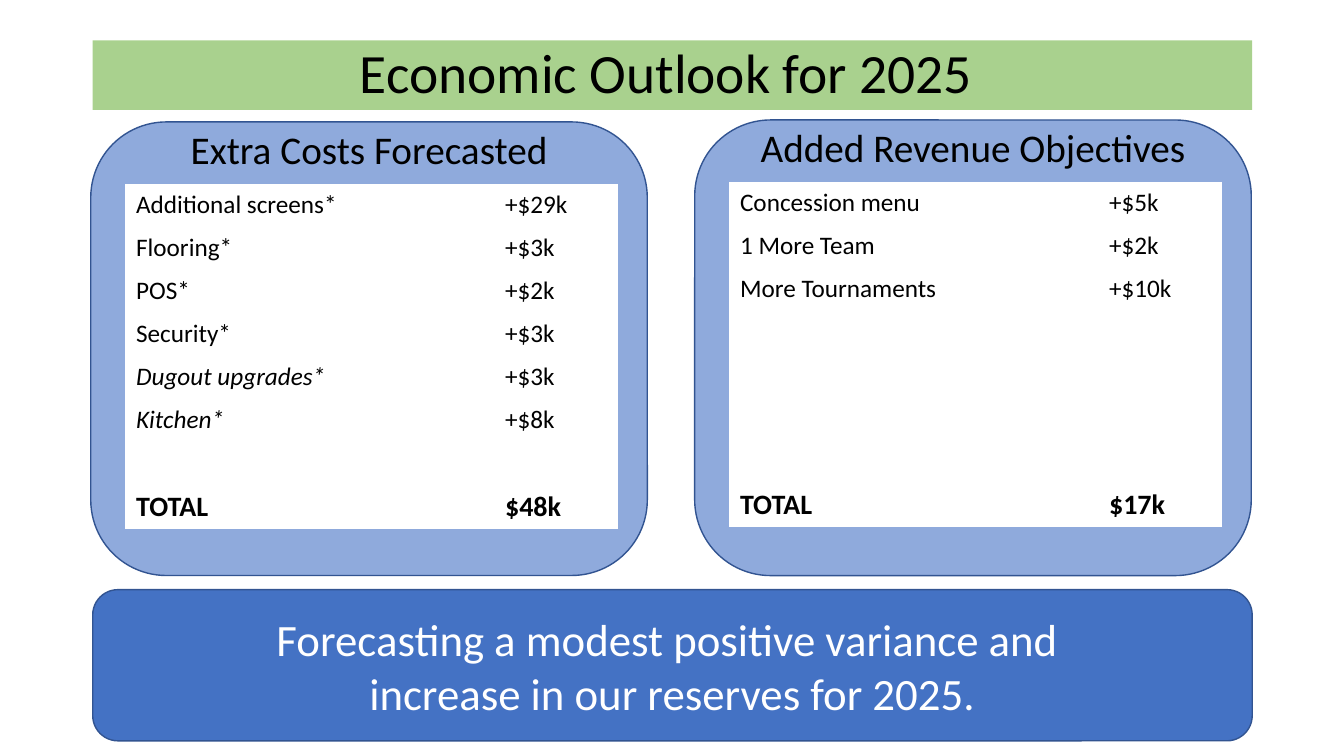
from dataclasses import dataclass

import pptx
import pptx.dml.color
import pptx.enum.shapes
import pptx.enum.text
import pptx.util

Inches = pptx.util.Inches
MSO_SHAPE = pptx.enum.shapes.MSO_SHAPE
ROWS = 8
TABLE_HEIGHT = 3.41
COLUMN_WIDTHS = (3.66, 1.21)


@dataclass
class Item:
    label: str
    amount: str
    italic: bool = False


@dataclass
class Panel:
    left: float
    top: float
    height: float
    heading: str
    items: list[Item]
    total: str


PANELS = [
    Panel(0.9, 1.21, 4.5, "Extra Costs Forecasted", [
        Item("Additional screens*", "+$29k"),
        Item("Flooring*", "+$3k"),
        Item("POS*", "+$2k"),
        Item("Security*", "+$3k"),
        Item("Dugout upgrades*", "+$3k", True),
        Item("Kitchen*", "+$8k", True),
    ], "$48k"),
    Panel(6.89, 1.19, 4.52, "Added Revenue Objectives", [
        Item("Concession menu", "+$5k"),
        Item("1 More Team", "+$2k"),
        Item("More Tournaments", "+$10k"),
    ], "$17k"),
]


def rgb(color: str) -> pptx.dml.color.RGBColor:
    return pptx.dml.color.RGBColor.from_string(color)


def add_run(p, text: str, size: float, color: str = "000000",
            bold: bool = False, italic: bool = False) -> None:
    r = p.add_run()
    r.text = text
    r.font.name = "Calibri"
    r.font.size = pptx.util.Pt(size)
    r.font.color.rgb = rgb(color)
    r.font.bold = bold
    r.font.italic = italic


def add_box(s, kind, left: float, top: float, width: float, height: float,
            fill: str, line: str | None = None):
    sp = s.shapes.add_shape(kind, Inches(left), Inches(top), Inches(width), Inches(height))
    sp.shadow.inherit = False
    sp.fill.solid()
    sp.fill.fore_color.rgb = rgb(fill)
    if line:
        sp.line.color.rgb = rgb(line)
        sp.line.width = pptx.util.Pt(1)
    else:
        sp.line.fill.background()
    return sp


def centre(sp):
    tf = sp.text_frame
    tf.word_wrap = True
    p = tf.paragraphs[0]
    p.alignment = pptx.enum.text.PP_ALIGN.CENTER
    return p


def add_table(s, panel: Panel) -> None:
    table = s.shapes.add_table(
        ROWS, len(COLUMN_WIDTHS), Inches(panel.left + 0.35), Inches(panel.top + 0.62),
        Inches(sum(COLUMN_WIDTHS)), Inches(TABLE_HEIGHT)).table
    table.first_row = False
    table.horz_banding = False
    for column, width in zip(table.columns, COLUMN_WIDTHS):
        column.width = Inches(width)
    for row in table.rows:
        row.height = Inches(TABLE_HEIGHT / ROWS)
        for cell in row.cells:
            cell.fill.solid()
            cell.fill.fore_color.rgb = rgb("FFFFFF")
    for i, item in enumerate(panel.items):
        add_run(table.cell(i, 0).text_frame.paragraphs[0], item.label, 18, italic=item.italic)
        add_run(table.cell(i, 1).text_frame.paragraphs[0], item.amount, 18)
    for j, text in enumerate(("TOTAL", panel.total)):
        add_run(table.cell(ROWS - 1, j).text_frame.paragraphs[0], text, 20, bold=True)


def add_panel(s, panel: Panel) -> None:
    add_box(s, MSO_SHAPE.ROUNDED_RECTANGLE, panel.left, panel.top, 5.52, panel.height,
            "8FAADC", "325491")
    heading = s.shapes.add_textbox(Inches(panel.left), Inches(panel.top - 0.02),
                                   Inches(5.52), Inches(0.57))
    add_run(centre(heading), panel.heading, 28)
    add_table(s, panel)


def main() -> None:
    prs = pptx.Presentation()
    prs.slide_width = Inches(13.33)
    prs.slide_height = Inches(7.5)
    s = prs.slides.add_slide(prs.slide_layouts[6])

    title = add_box(s, MSO_SHAPE.RECTANGLE, 0.92, 0.4, 11.5, 0.69, "A9D18E")
    p = centre(title)
    p.line_spacing = 0.9
    add_run(p, "Economic Outlook for 2025 ", 39.6)

    for panel in PANELS:
        add_panel(s, panel)

    banner = add_box(s, MSO_SHAPE.ROUNDED_RECTANGLE, 0.92, 5.85, 11.5, 1.5, "4472C4", "325491")
    p = centre(banner)
    add_run(p, "Forecasting a modest positive variance and ", 32, "FFFFFF")
    p.add_line_break()
    add_run(p, "increase in our reserves for 2025.", 32, "FFFFFF")

    prs.save("out.pptx")


if __name__ == "__main__":
    main()
